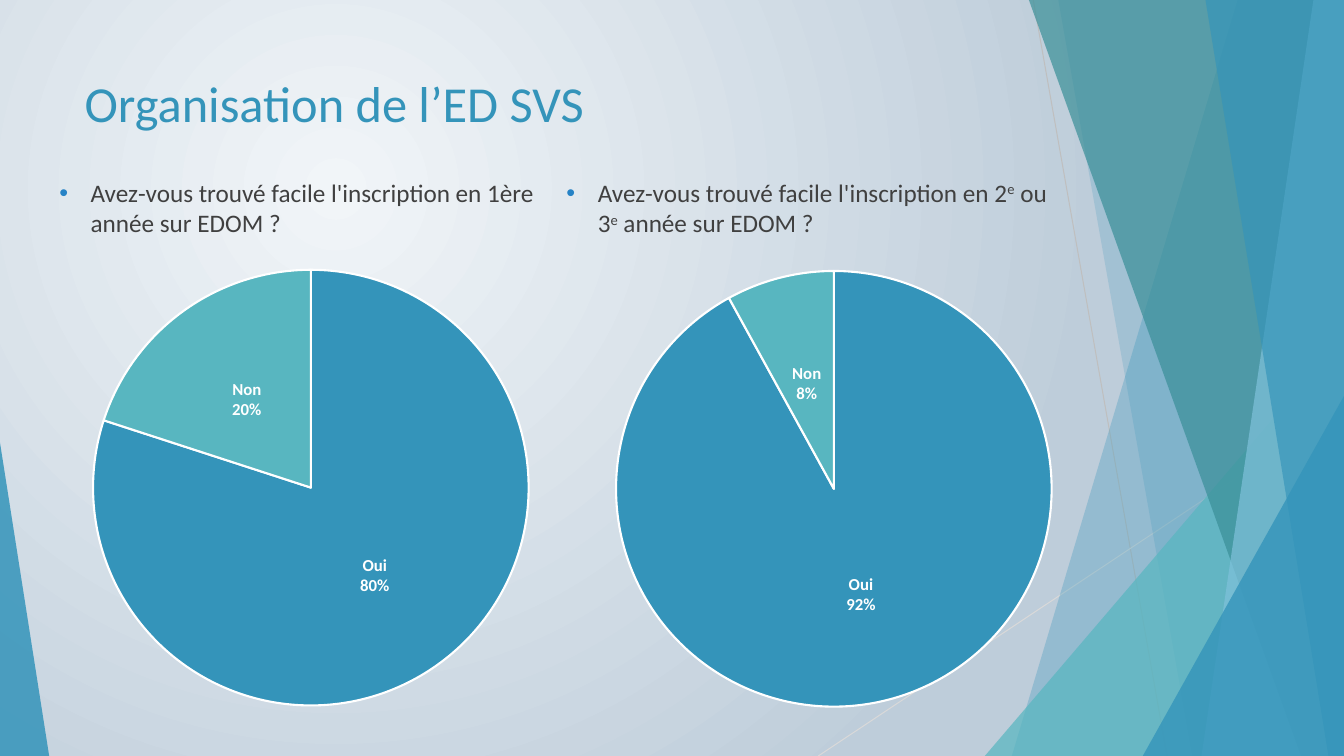
from lxml.etree import SubElement
from pptx import Presentation
from pptx.chart.data import CategoryChartData
from pptx.dml.color import RGBColor
from pptx.enum.chart import XL_CHART_TYPE, XL_LABEL_POSITION
from pptx.enum.shapes import MSO_CONNECTOR, MSO_SHAPE
from pptx.enum.text import MSO_ANCHOR, MSO_AUTO_SIZE, PP_ALIGN
from pptx.oxml import parse_xml
from pptx.oxml.ns import nsdecls, qn
from pptx.util import Cm, Pt

BLUE, TEAL, GREY, WHITE = "3494BA", "58B6C0", "404040", "FFFFFF"
WIDTH, HEIGHT = 33.87, 19.05


def color(value):
    return RGBColor.from_string(value)


def paint(shape, fill, opacity):
    """Give a shape a see-through fill with no line or shadow; opacity in percent."""
    shape.shadow.inherit = False
    shape.line.fill.background()
    shape.fill.solid()
    shape.fill.fore_color.rgb = color(fill)
    srgb = shape._element.spPr.find(".//" + qn("a:srgbClr"))
    SubElement(srgb, qn("a:alpha"), val=str(opacity * 1000))


prs = Presentation()
prs.slide_width, prs.slide_height = Cm(WIDTH), Cm(HEIGHT)
slide = prs.slides.add_slide(prs.slide_layouts[3])
shapes = slide.shapes

# Radial background
background = slide.background.fill
background.gradient()
for stop, tint in zip(background.gradient_stops, ("F1F5F8", "BECDDA")):
    stop.color.rgb = color(tint)
background.gradient_stops[0].position = 0
background.gradient_stops[1].position = 1
linear = slide._element.find(".//" + qn("a:lin"))
linear.getparent().replace(linear, parse_xml(
    f'<a:path {nsdecls("a")} path="circle">'
    '<a:fillToRect l="50000" t="50000" r="100000" b="100000"/></a:path>'))

# Thin crossing lines
for x1, y1, x2, y2, tint in (
    (26.04, 0, 29.41, HEIGHT, "BFBFBF"),
    (WIDTH, 10.24, 20.62, HEIGHT, "D9D9D9"),
):
    ray = shapes.add_connector(MSO_CONNECTOR.STRAIGHT, Cm(x1), Cm(y1), Cm(x2), Cm(y2))
    ray.line.color.rgb = color(tint)
    ray.line.width = Pt(0.75)
    SubElement(ray._element.spPr, qn("a:effectLst"))

# Facets, back to front: a band runs from its slanted left side to the slide's
# right edge; a triangle has its apex over one end of its base
facets = (
    ("band", (31.19, 25.5), BLUE, 30),
    ("band", (26.67, 30.05), BLUE, 20),
    ("triangle", (24.82, 8.46, 9.05, 1), TEAL, 72),
    ("band", (25.93, 32.79), "3A8F98", 70),
    ("band", (33.1, 30.28), "7FC1DB", 70),
    ("band", (30.38, 33.48), BLUE, 65),
    ("triangle", (28.8, 9.98, 5.07, 1), BLUE, 80),
    ("triangle", (0, 11.15, 1.24, 0), BLUE, 85),
)
for kind, geometry, tint, opacity in facets:
    if kind == "band":
        top_x, bottom_x = geometry
        outline = shapes.build_freeform(Cm(top_x), 0)
        outline.add_line_segments([
            (Cm(WIDTH), 0), (Cm(WIDTH), Cm(HEIGHT)), (Cm(bottom_x), Cm(HEIGHT))])
        facet = outline.convert_to_shape()
    else:
        left, top, width, apex = geometry
        facet = shapes.add_shape(MSO_SHAPE.ISOSCELES_TRIANGLE, Cm(left), Cm(top),
                                 Cm(width), Cm(HEIGHT - top))
        facet.adjustments[0] = apex
    paint(facet, tint, opacity)

# Title
title = shapes.title
title.left, title.top, title.width, title.height = Cm(1.88), Cm(1.7), Cm(23.88), Cm(3.66)
title.text_frame.vertical_anchor = MSO_ANCHOR.TOP
heading = title.text_frame.paragraphs[0]
heading.alignment = PP_ALIGN.LEFT
heading_run = heading.add_run()
heading_run.text = "Organisation de l’ED SVS"
heading_run.font.size = Pt(36)
heading_run.font.name = "Calibri"
heading_run.font.color.rgb = color(BLUE)

# Each question: placeholder, left edge, text pieces (every second one is
# superscript), chart left and top, answer shares
questions = (
    (1, 1.24, ("Avez-vous trouvé facile l'inscription en 1ère année sur EDOM ?",),
     1.55, 6.45, (0.8, 0.2)),
    (2, 14.02, ("Avez-vous trouvé facile l'inscription en 2", "e", " ou 3", "e",
                " année sur EDOM ?"),
     14.73, 6.48, (0.92, 0.08)),
)
for index, left, pieces, chart_left, chart_top, shares in questions:
    question = slide.placeholders[index]
    question.left, question.top = Cm(left), Cm(4.34)
    question.width, question.height = Cm(13.26), Cm(1.8)
    question.text_frame.auto_size = MSO_AUTO_SIZE.NONE
    wording = question.text_frame.paragraphs[0]
    wording.space_before = Pt(0)
    for position, piece in enumerate(pieces):
        run = wording.add_run()
        run.text = piece
        run.font.size = Pt(18)
        run.font.name = "Calibri"
        run.font.color.rgb = color(GREY)
        if position % 2:
            run.font._element.set("baseline", "30000")
    bullet = wording._p.get_or_add_pPr()
    bullet.set("marL", str(Cm(0.79)))
    bullet.set("indent", str(-Cm(0.79)))
    SubElement(SubElement(bullet, qn("a:buClr")), qn("a:srgbClr"), val="2683C6")
    SubElement(bullet, qn("a:buFont"), typeface="Arial")
    SubElement(bullet, qn("a:buChar"), char="•")

    answers = CategoryChartData(number_format="0%")
    answers.categories = ["Oui", "Non"]
    answers.add_series("Réponses", shares)
    chart = shapes.add_chart(XL_CHART_TYPE.PIE, Cm(chart_left), Cm(chart_top),
                             Cm(12.57), Cm(11.68), answers).chart
    chart.has_title = False
    chart.has_legend = False
    chart.font.name = "Calibri"
    chart.font.size = Pt(10)
    pie = chart.plots[0]
    pie.vary_by_categories = True
    for slice_index, tint in enumerate((BLUE, TEAL)):
        answer = pie.series[0].points[slice_index].format
        answer.fill.solid()
        answer.fill.fore_color.rgb = color(tint)
        answer.line.color.rgb = color(WHITE)
        answer.line.width = Pt(1.5)

    pie.has_data_labels = True
    labels = pie.data_labels
    labels.show_category_name = True
    labels.show_value = True
    labels.show_percentage = False
    labels.number_format = "0%"
    labels.number_format_is_linked = False
    labels.position = XL_LABEL_POSITION.CENTER
    labels.font.name = "Calibri"
    labels.font.size = Pt(12)
    labels.font.bold = True
    labels.font.color.rgb = color(WHITE)
    labels._element.find(qn("c:showBubbleSize")).addnext(
        parse_xml(f'<c:separator {nsdecls("c")}>\n</c:separator>'))

    plot_area = chart._chartSpace.find(".//" + qn("c:plotArea"))
    for layout in plot_area.findall(qn("c:layout")):
        plot_area.remove(layout)
    plot_area.insert(0, parse_xml(
        f'<c:layout {nsdecls("c")}><c:manualLayout><c:layoutTarget val="inner"/>'
        '<c:xMode val="edge"/><c:yMode val="edge"/><c:x val="0.06"/><c:y val="0.03"/>'
        '<c:w val="0.88"/><c:h val="0.94"/></c:manualLayout></c:layout>'))

prs.save("out.pptx")
